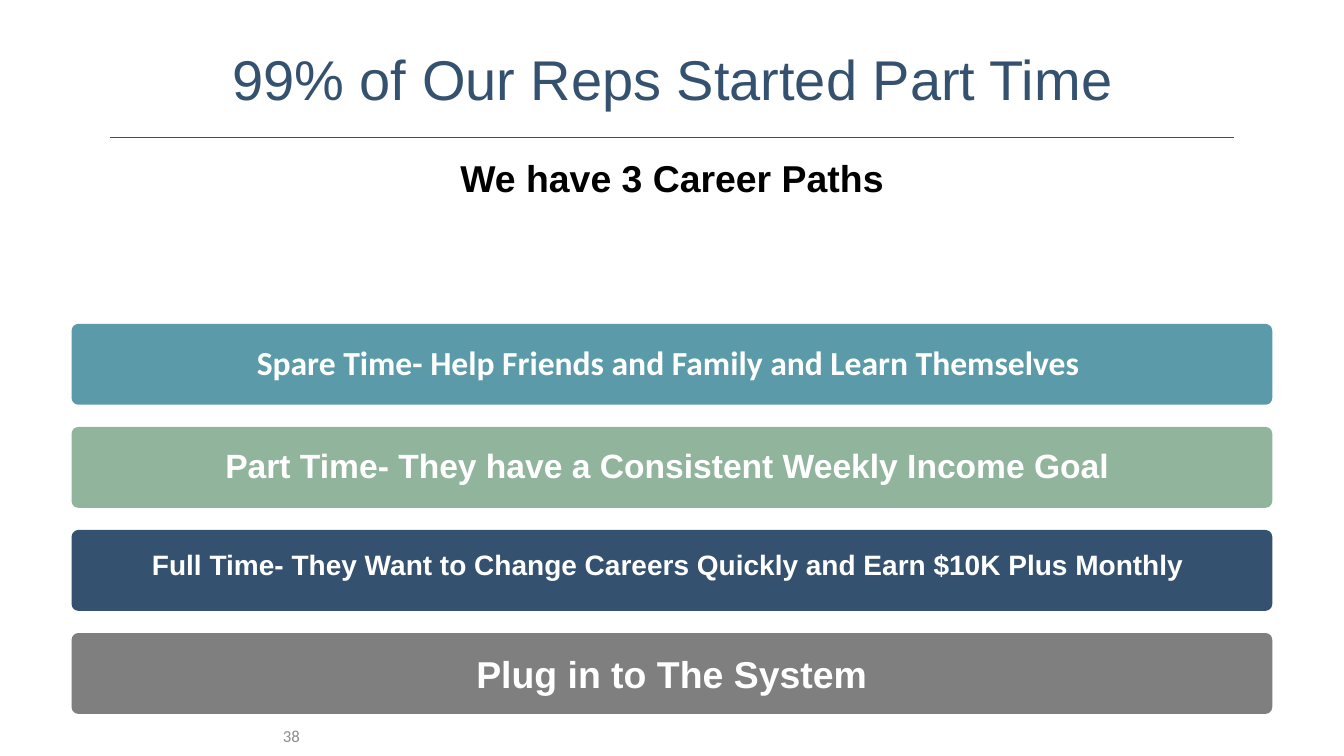
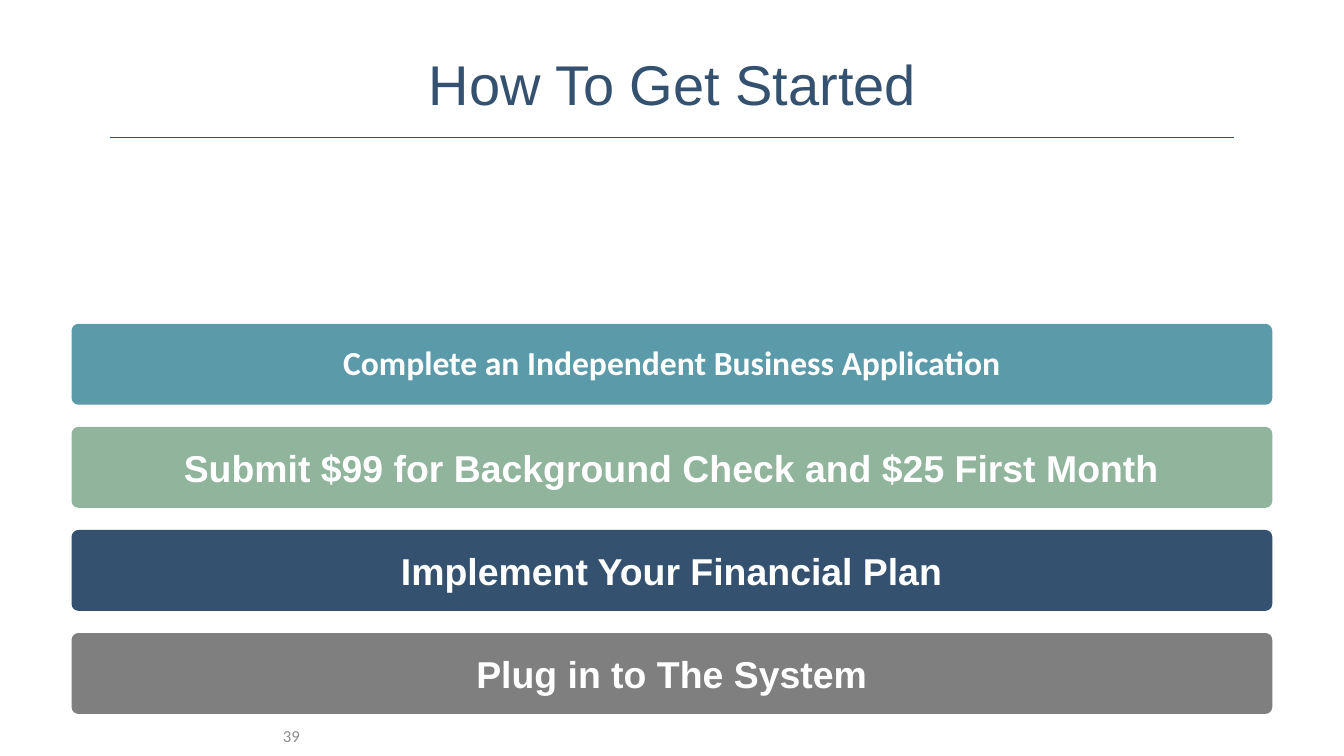
"""Build two slides of stacked career and sign-up steps."""
import pptx
import pptx.dml.color
import pptx.enum.shapes
import pptx.enum.text
import pptx.oxml.ns
import pptx.util
from lxml import etree

Pt = pptx.util.Pt
Anchor = pptx.enum.text.MSO_ANCHOR
Align = pptx.enum.text.PP_ALIGN

NAVY, SAGE, TEAL, GRAY = "34526F", "91B49C", "5B9BA9", "7F7F7F"
WHITE, BLACK, NUMBER_GRAY = "FFFFFF", "000000", "8C8C8C"
BAR_COLORS = (TEAL, SAGE, NAVY, GRAY)
BAR_LEFT, BAR_TOP, BAR_WIDTH, BAR_HEIGHT, BAR_STEP = 52.7, 232.9, 854.6, 54.7, 73.6

SLIDES = [
    {
        "number": "38",
        "title": "99% of Our Reps Started Part Time",
        "title_top": 34.6,
        "subtitle": "We have 3 Career Paths",
        "bars": [
            ("Spare Time- Help Friends and Family and Learn Themselves ", 24, "Calibri"),
            ("Part Time- They have a Consistent Weekly Income Goal ", 24, "Arial"),
            ("Full Time- They Want to Change Careers Quickly and Earn $10K Plus Monthly ", 20, "Arial"),
            ("Plug in to The System", 26.7, "Arial"),
        ],
    },
    {
        "number": "39",
        "title": "How To Get Started",
        "title_top": 38.2,
        "subtitle": None,
        "bars": [
            ("Complete an Independent Business Application", 24, "Calibri"),
            ("Submit $99 for Background Check and $25 First Month", 26.7, "Arial"),
            ("Implement Your Financial Plan", 26.7, "Arial"),
            ("Plug in to The System", 26.7, "Arial"),
        ],
    },
]


def rgb(color):
    """Turn a hex string into a colour."""
    return pptx.dml.color.RGBColor.from_string(color)


def write_text(shape, text, size=24, font="Arial", color=BLACK, bold=False,
               align=Align.CENTER, anchor=Anchor.TOP, spacing=1.0, inset_top=4.8):
    """Fill a shape with one formatted paragraph."""
    frame = shape.text_frame
    frame.auto_size = pptx.enum.text.MSO_AUTO_SIZE.NONE
    frame.word_wrap = True
    frame.vertical_anchor = anchor
    frame.margin_left = frame.margin_right = Pt(9.6)
    frame.margin_top, frame.margin_bottom = Pt(inset_top), Pt(4.8)
    para = frame.paragraphs[0]
    para.alignment = align
    para.line_spacing = spacing
    span = para.add_run()
    span.text = text
    span.font.size, span.font.name, span.font.bold = Pt(size), font, bold
    span.font.color.rgb = rgb(color)


def add_text(page, text, left, top, width, height, **style):
    """Add a text box."""
    box = page.shapes.add_textbox(Pt(left), Pt(top), Pt(width), Pt(height))
    write_text(box, text, **style)


def set_title(page, text, top):
    """Place and format the title placeholder."""
    title = page.shapes.title
    title.left, title.top, title.width, title.height = Pt(75.6), Pt(top), Pt(809.3), Pt(53)
    write_text(title, text, size=40, color=NAVY, spacing=0.85)


def add_title_rule(page):
    """Draw the thin line under the title."""
    rule = page.shapes.add_connector(
        pptx.enum.shapes.MSO_CONNECTOR.STRAIGHT, Pt(78.5), Pt(97.9), Pt(881.3), Pt(97.9))
    rule.line.color.rgb = rgb(NAVY)
    rule.line.width = Pt(0.75)
    properties = rule._element.find(pptx.oxml.ns.qn("p:spPr"))
    etree.SubElement(properties, pptx.oxml.ns.qn("a:effectLst"))


def add_bar(page, row, color, text, size, font):
    """Add one labelled bar of the stack."""
    bar = page.shapes.add_shape(
        pptx.enum.shapes.MSO_SHAPE.ROUNDED_RECTANGLE,
        Pt(BAR_LEFT), Pt(BAR_TOP + row * BAR_STEP), Pt(BAR_WIDTH), Pt(BAR_HEIGHT))
    bar.adjustments[0] = 0.06
    bar.shadow.inherit = False
    bar.fill.solid()
    bar.fill.fore_color.rgb = rgb(color)
    bar.line.color.rgb = rgb(color)
    bar.line.width = Pt(3)
    write_text(bar, text, size=size, font=font, color=WHITE, bold=True, inset_top=10.4)


def add_page(deck, content):
    """Add one slide with its title, bars and number."""
    page = deck.slides.add_slide(deck.slide_layouts.get_by_name("Title Only"))
    set_title(page, content["title"], content["title_top"])
    add_title_rule(page)
    if content["subtitle"]:
        add_text(page, content["subtitle"], 197.3, 109.4, 565.9, 69.1,
                 size=26.7, bold=True, spacing=0.9)
    for row, (color, label) in enumerate(zip(BAR_COLORS, content["bars"])):
        add_bar(page, row, color, *label)
    add_text(page, content["number"], 0, 511.2, 223.9, 28.8, size=12, font="Calibri",
             color=NUMBER_GRAY, align=Align.RIGHT, anchor=Anchor.MIDDLE)


def main():
    """Build and save the deck."""
    deck = pptx.Presentation()
    deck.slide_width, deck.slide_height = Pt(960), Pt(540)
    for content in SLIDES:
        add_page(deck, content)
    deck.save("out.pptx")


if __name__ == "__main__":
    main()
